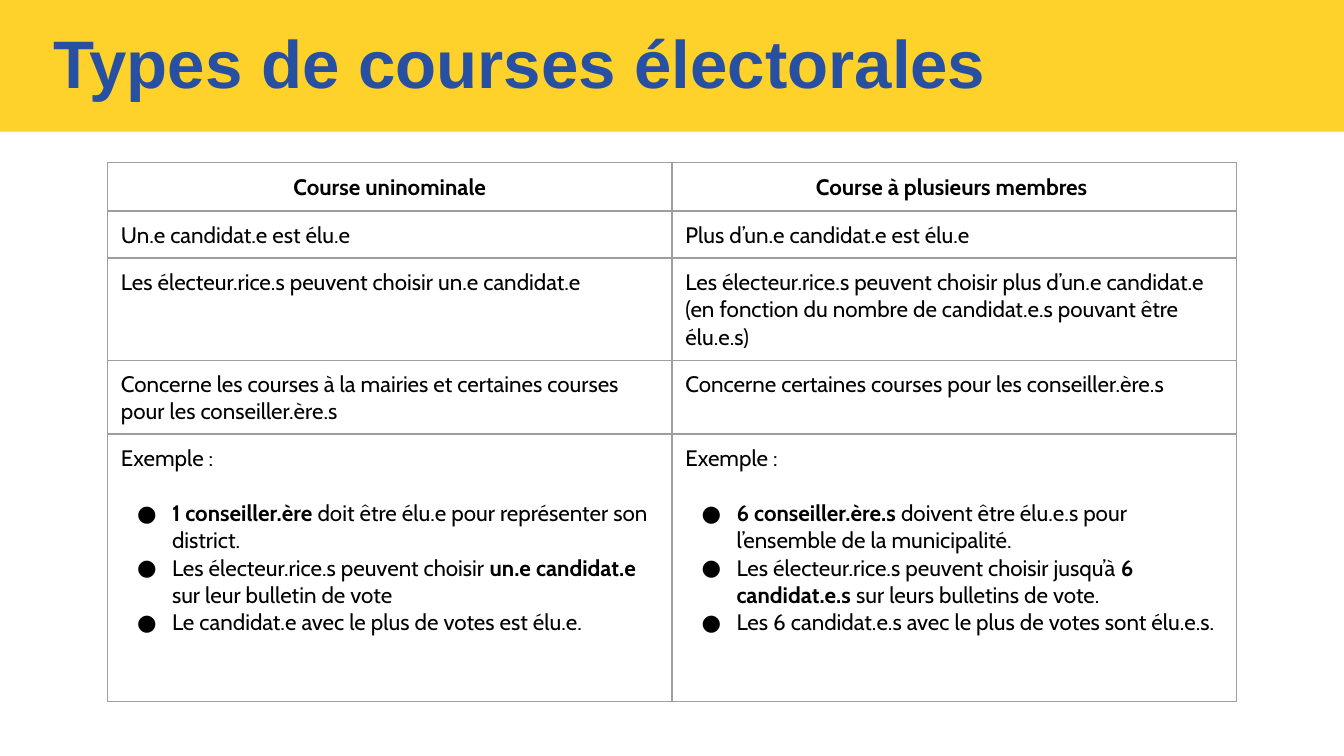
"""Build a slide comparing two types of electoral race in a table."""
from dataclasses import dataclass

import pptx
import pptx.dml.color
import pptx.enum.shapes
import pptx.enum.text
import pptx.oxml
import pptx.oxml.ns
import pptx.util

Inches = pptx.util.Inches
Pt = pptx.util.Pt
Align = pptx.enum.text.PP_ALIGN
Anchor = pptx.enum.text.MSO_ANCHOR
NS = pptx.oxml.ns.nsdecls("a")
BLACK, GRAY, GOLD, BLUE = "000000", "9E9E9E", "FED22B", "2750A3"


@dataclass
class Para:
    """A paragraph whose bold parts stand between asterisks."""
    text: str
    bullet: bool = False
    gap: float = 0
    align: Align = Align.LEFT


@dataclass
class Row:
    """A table row with its height in inches and its cells."""
    height: float
    cells: list[list[Para]]


def color(code: str) -> pptx.dml.color.RGBColor:
    """Turn a hex string into a colour."""
    return pptx.dml.color.RGBColor.from_string(code)


def style(run, size: float, name: str, code: str, bold: bool) -> None:
    """Set the font of a run."""
    for key, value in {"size": Pt(size), "name": name, "bold": bold}.items():
        setattr(run.font, key, value)
    run.font.color.rgb = color(code)


def write(line, para: Para) -> None:
    """Write one paragraph of a cell."""
    line.alignment = para.align
    line.space_before = Pt(para.gap)
    for i, part in enumerate(para.text.split("*")):
        if part:
            run = line.add_run()
            run.text = part
            style(run, 12, "Cabin", BLACK, i % 2 == 1)
    if para.bullet:
        props = line._p.get_or_add_pPr()
        props.set("marL", str(Inches(0.38)))
        props.set("indent", str(Inches(-0.26)))
        for xml in (f'<a:buClr {NS}><a:srgbClr val="{BLACK}"/></a:buClr>',
                    f'<a:buFont {NS} typeface="Cabin"/>',
                    f'<a:buChar {NS} char="●"/>'):
            props.append(pptx.oxml.parse_xml(xml))


def border(cell) -> None:
    """Draw a thin line on each side of a cell."""
    props = cell._tc.get_or_add_tcPr()
    for side in "LRTB":
        props.append(pptx.oxml.parse_xml(
            f'<a:ln{side} {NS} w="{Pt(0.75)}"><a:solidFill>'
            f'<a:srgbClr val="{GRAY}"/></a:solidFill></a:ln{side}>'))


def fill(cell, paras: list[Para]) -> None:
    """Format a cell and write its paragraphs."""
    sides = {"margin_left": 0.1, "margin_right": 0.1,
             "margin_top": 0.08, "margin_bottom": 0.07}
    for key, value in sides.items():
        setattr(cell, key, Inches(value))
    border(cell)
    cell.fill.background()
    frame = cell.text_frame
    for i, para in enumerate(paras):
        write(frame.add_paragraph() if i else frame.paragraphs[0], para)


def grid(slide, rows: list[Row]) -> None:
    """Add the table."""
    high = sum(row.height for row in rows)
    table = slide.shapes.add_table(
        len(rows), 2, Inches(0.8), Inches(1.21), Inches(8.4), Inches(high)).table
    for key in ("first_row", "horz_banding"):
        setattr(table, key, False)
    for r, row in enumerate(rows):
        table.rows[r].height = Inches(row.height)
        for c, paras in enumerate(row.cells):
            fill(table.cell(r, c), paras)


def banner(slide, text: str) -> None:
    """Add the gold band and the title."""
    band = slide.shapes.add_shape(
        pptx.enum.shapes.MSO_SHAPE.RECTANGLE, 0, 0, Inches(10), Inches(0.98))
    band.shadow.inherit = False
    band.fill.solid()
    band.fill.fore_color.rgb = color(GOLD)
    band.line.fill.background()
    box = slide.shapes.add_textbox(
        Inches(0.3), Inches(0.16), Inches(8.62), Inches(0.68))
    frame = box.text_frame
    for key, value in {"word_wrap": True, "vertical_anchor": Anchor.MIDDLE}.items():
        setattr(frame, key, value)
    line = frame.paragraphs[0]
    line.line_spacing = 0.9
    run = line.add_run()
    run.text = text
    style(run, 36, "Arial", BLUE, True)


def head(text: str) -> list[Para]:
    """Make a centred bold heading."""
    return [Para(f"*{text}*", align=Align.CENTER)]


def sample(*points: str) -> list[Para]:
    """Make an example with its bullet points."""
    return [Para("Exemple :")] + [
        Para(text, True, 0 if i else 14.7) for i, text in enumerate(points)]


ROWS = [
    Row(0.36, [head("Course uninominale"), head("Course à plusieurs membres ")]),
    Row(0.35, [[Para("Un.e candidat.e est élu.e")],
               [Para("Plus d’un.e candidat.e est élu.e")]]),
    Row(0.76, [[Para("Les électeur.rice.s peuvent choisir un.e candidat.e")],
               [Para("Les électeur.rice.s peuvent choisir plus d’un.e candidat.e "
                     "(en fonction du nombre de candidat.e.s pouvant être élu.e.s)")]]),
    Row(0.55, [[Para("Concerne les courses à la mairies et certaines courses "
                     "pour les conseiller.ère.s")],
               [Para("Concerne certaines courses pour les conseiller.ère.s")]]),
    Row(1.99, [
        sample("*1 conseiller.ère *doit être élu.e pour représenter son district.",
               "Les électeur.rice.s peuvent choisir* un.e candidat.e* "
               "sur leur bulletin de vote",
               "Le candidat.e avec le plus de votes est élu.e."),
        sample("*6 conseiller.ère.s *doivent être élu.e.s pour l’ensemble "
               "de la municipalité.",
               "Les électeur.rice.s peuvent choisir jusqu’à *6 candidat.e.s* "
               "sur leurs bulletins de vote.",
               "Les 6 candidat.e.s avec le plus de votes sont élu.e.s.")]),
]


def main() -> None:
    """Build and save the deck."""
    deck = pptx.Presentation()
    deck.slide_width, deck.slide_height = Inches(10), Inches(10 * 9 / 16)
    slide = deck.slides.add_slide(deck.slide_layouts[6])
    banner(slide, "Types de courses électorales")
    grid(slide, ROWS)
    deck.save("out.pptx")


if __name__ == "__main__":
    main()
